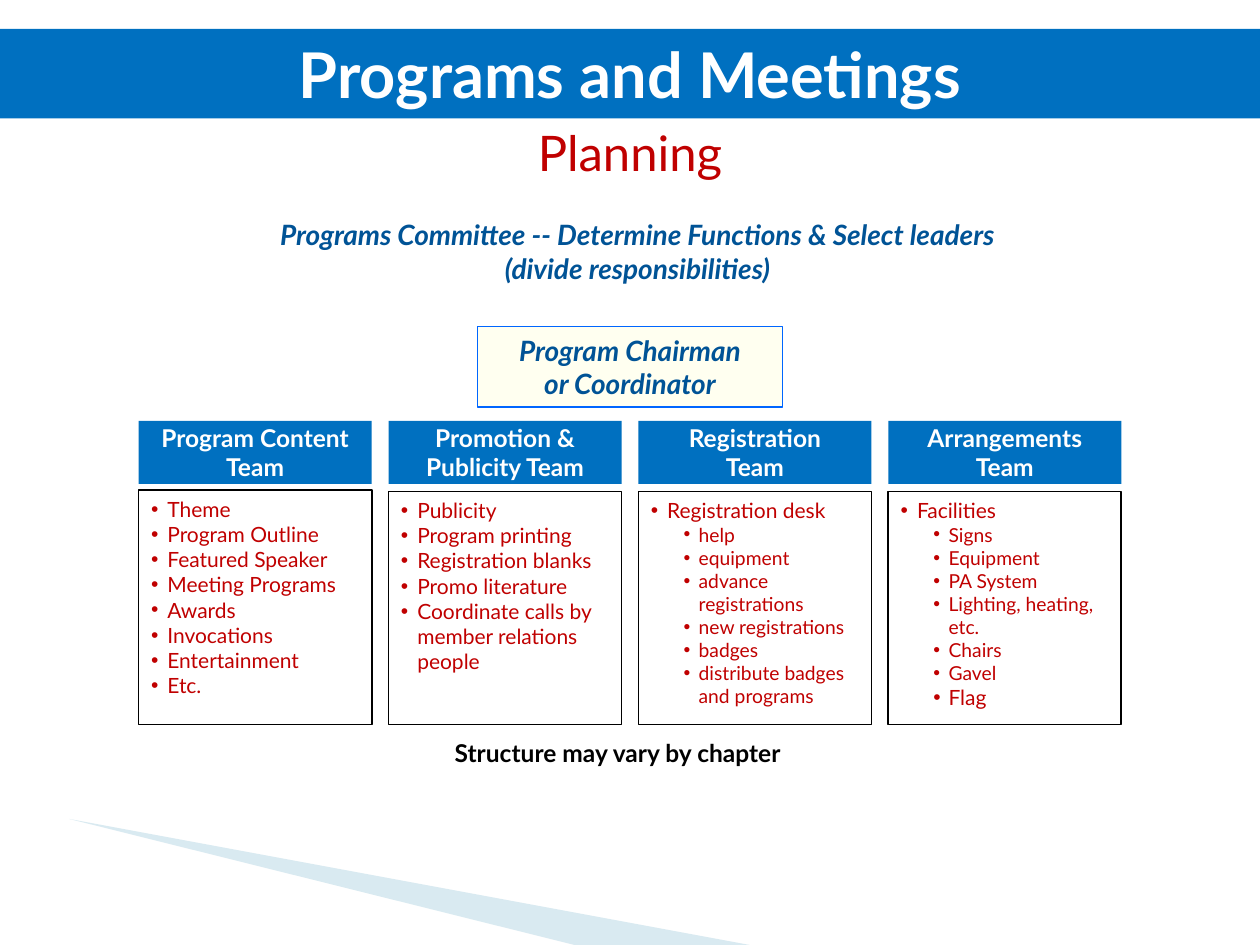
from lxml.etree import SubElement
from pptx import Presentation
from pptx.dml.color import RGBColor
from pptx.enum.shapes import MSO_SHAPE
from pptx.enum.text import MSO_ANCHOR, MSO_AUTO_SIZE, PP_ALIGN
from pptx.oxml.ns import qn
from pptx.util import Inches, Pt

COLORS = {"blue": "0070C0", "navy": "005396", "red": "C00000", "white": "FFFFFF",
          "black": "000000", "yellow": "FFFF00", "edge": "0066FF", "swoosh": "A0CBDC"}


def write(shape, lines, size, color, bold=False, italic=False, center=True,
          middle=False, wrap=True, inset=(0.1, 0.05), indent=0, bullet=False):
    """Fill a shape with paragraphs; each line is a (text, level) pair or plain text."""
    frame = shape.text_frame
    frame.auto_size = MSO_AUTO_SIZE.NONE
    frame.word_wrap = wrap
    frame.vertical_anchor = MSO_ANCHOR.MIDDLE if middle else MSO_ANCHOR.TOP
    frame.margin_left = frame.margin_right = Inches(inset[0])
    frame.margin_top = frame.margin_bottom = Inches(inset[1])
    for i, line in enumerate(lines):
        text, level = line if isinstance(line, tuple) else (line, 0)
        para = frame.paragraphs[0] if i == 0 else frame.add_paragraph()
        para.text = text
        para.level = level
        para.alignment = PP_ALIGN.CENTER if center else PP_ALIGN.LEFT
        para.space_before = Pt(0)
        props = para._p.get_or_add_pPr()
        if bullet:
            props.set("marL", str(Inches(0.38 if level else 0.13)))
            props.set("indent", str(Inches(-0.12 if level else -0.13)))
            SubElement(props, qn("a:buFont")).set("typeface", "Arial")
            SubElement(props, qn("a:buChar")).set("char", "•")
        elif indent:
            props.set("marL", str(Inches(indent)))
            props.set("indent", "0")
        font = para.font
        font.name = "Lato"
        font.size = Pt(size - 1 if level and bullet else size)
        font.bold, font.italic = bold, italic
        font.color.rgb = RGBColor.from_string(COLORS[color])


def paint(shape, fill=None, line=None, width=1, alpha=None):
    """Set fill, outline and opacity (percent) of a shape."""
    shape.shadow.inherit = False
    if fill:
        shape.fill.solid()
        shape.fill.fore_color.rgb = RGBColor.from_string(COLORS[fill])
    else:
        shape.fill.background()
    if alpha:
        tint = shape._element.spPr.find(qn("a:solidFill"))[0]
        SubElement(tint, qn("a:alpha")).set("val", str(alpha * 1000))
    if line:
        shape.line.color.rgb = RGBColor.from_string(COLORS[line])
        shape.line.width = Pt(width)
    else:
        shape.line.fill.background()


deck = Presentation()
deck.slide_width, deck.slide_height = Inches(10), Inches(7.5)
slide = deck.slides.add_slide(deck.slide_layouts[0])
shapes = slide.shapes

# Title band and subtitle
title, sub = shapes.title, slide.placeholders[1]
title.left, title.top = Inches(0), Inches(0.23)
title.width, title.height = Inches(10), Inches(0.71)
paint(title, "blue")
write(title, ["Programs and Meetings"], 36, "white", bold=True, middle=True)
sub.left, sub.top = Inches(1.25), Inches(0.92)
sub.width, sub.height = Inches(7.5), Inches(0.67)
write(sub, ["Planning"], 28, "red")

# Swoosh at the bottom
pen = shapes.build_freeform(Inches(0.55), Inches(6.5))
pen.add_line_segments([(Inches(5.95), Inches(7.5)), (Inches(4.56), Inches(7.5))])
paint(pen.convert_to_shape(), "swoosh", alpha=40)

# Committee and chairman
box = shapes.add_textbox(Inches(1.04), Inches(1.68), Inches(7.92), Inches(0.67))
write(box, [("Programs Committee -- Determine Functions & Select leaders", 1),
            ("(divide responsibilities)", 1)],
      16, "navy", bold=True, italic=True, indent=0.12)
chair = shapes.add_shape(MSO_SHAPE.RECTANGLE, Inches(3.79), Inches(2.59),
                         Inches(2.42), Inches(0.64))
paint(chair, "yellow", "edge", 0.75, alpha=6)
write(chair, ["Program Chairman", "or Coordinator"], 16, "navy",
      bold=True, italic=True, middle=True)

# Teams: heading, main points, sub-points
teams = [
    (["Program Content\vTeam"],
     ["Theme", "Program Outline", "Featured Speaker", "Meeting Programs", "Awards",
      "Invocations", "Entertainment", "Etc."], []),
    (["Promotion &\vPublicity Team"],
     ["Publicity", "Program printing", "Registration blanks", "Promo literature",
      "Coordinate calls by member relations people"], []),
    (["Registration", "Team"], ["Registration desk"],
     ["help", "equipment", "advance registrations", "new registrations", "badges",
      "distribute badges and programs"]),
    (["Arrangements", "Team"], ["Facilities"],
     ["Signs", "Equipment", "PA System", "Lighting, heating, etc.", "Chairs",
      "Gavel", "Flag"]),
]
for i, (name, points, subs) in enumerate(teams):
    left = Inches(1.1 + i * 5.95 / 3)
    top = 3.9 if i else 3.89
    group = shapes.add_group_shape().shapes
    head = group.add_shape(MSO_SHAPE.RECTANGLE, left, Inches(3.34),
                           Inches(1.85), Inches(0.5))
    paint(head, "blue")
    write(head, name, 14, "white", bold=True, middle=True, wrap=False, inset=(0, 0))
    card = group.add_shape(MSO_SHAPE.RECTANGLE, left, Inches(top),
                           Inches(1.85), Inches(5.75 - top))
    paint(card, line="black")
    write(card, points + [(text, 1) for text in subs], 12, "red",
          center=False, bullet=True)
card.text_frame.paragraphs[-1].font.size = Pt(12)  # "Flag" is a little larger

# Closing note
note = shapes.add_textbox(Inches(3.51), Inches(5.81), Inches(2.98), Inches(0.33))
write(note, ["Structure may vary by chapter"], 14, "black", bold=True,
      center=False, wrap=False)

deck.save("out.pptx")
